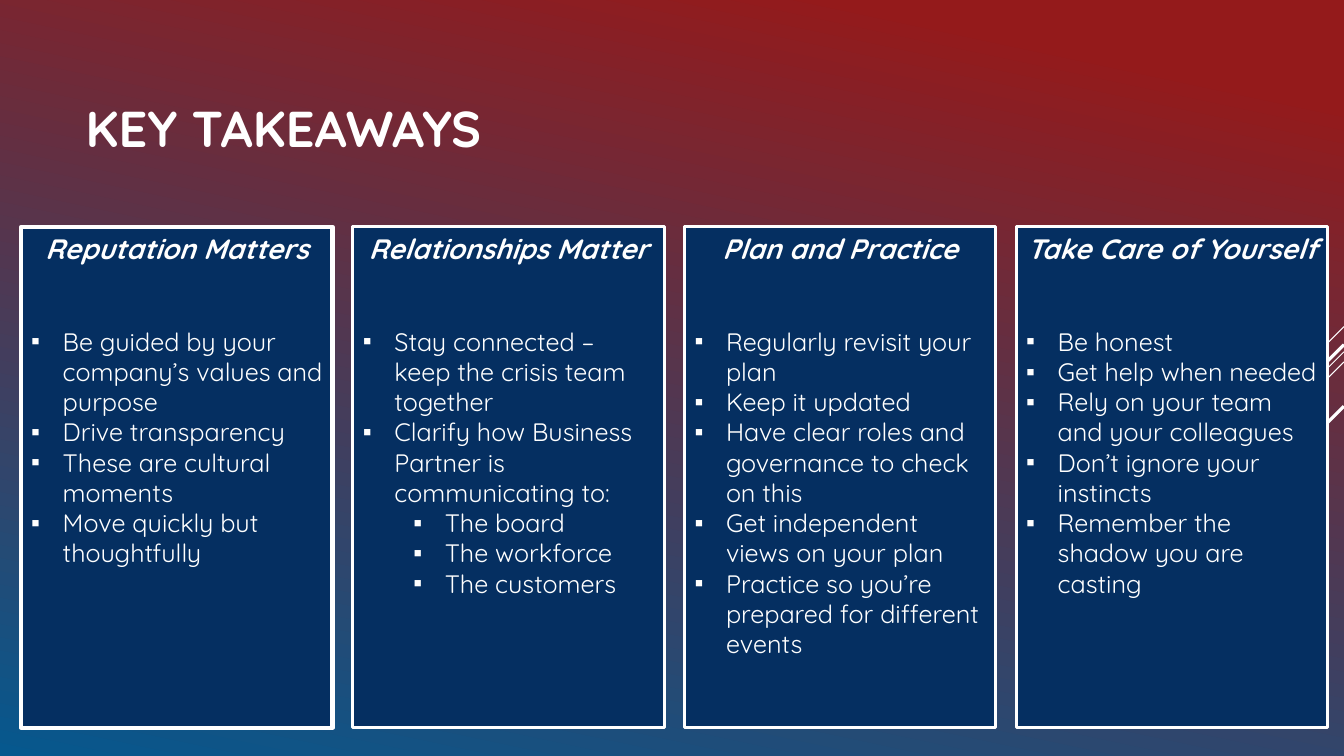
from dataclasses import dataclass

from lxml import etree
from pptx import Presentation
from pptx import util as u
from pptx.dml.color import RGBColor
from pptx.enum import shapes, text
from pptx.oxml import ns

FONT = "Quicksand"
COLORS = {"red": "941A1B", "blue": "06588E", "navy": "052F61", "white": "FFFFFF"}

CARD_LEFT, CARD_TOP = 15.1, 162
CARD_WIDTH, CARD_HEIGHT = 222.5, 357.8
CARD_PITCH = 236.9
INDENT, SUB_INDENT = 22.5, 58.5


@dataclass
class Ray:
    top: float
    reach: float
    weight: float


@dataclass
class Card:
    heading: str
    items: list[str]
    sub_items: list[str]
    border: float = 2.25


# Diagonal lines running down from the right edge
RAYS = [
    Ray(233.3, 72, 0.75),
    Ray(251.3, 234.7, 0.75),
    Ray(258.5, 149.4, 0.75),
    Ray(246.2, 137.5, 2.25),
    Ray(290.2, 100.1, 2.25),
]

CARDS = [
    Card("Reputation Matters", [
        "Be guided by your company’s values and purpose",
        "Drive transparency",
        "These are cultural moments",
        "Move quickly but thoughtfully",
    ], [], 3),
    Card("Relationships Matter", [
        "Stay connected – keep the crisis team together",
        "Clarify how Business Partner is communicating to:",
    ], ["The board", "The workforce", "The customers"]),
    Card("Plan and Practice", [
        "Regularly revisit your plan",
        "Keep it updated",
        "Have clear roles and governance to check on this",
        "Get independent views on your plan",
        "Practice so you’re prepared for different events",
    ], []),
    Card("Take Care of Yourself", [
        "Be honest",
        "Get help when needed",
        "Rely on your team and your colleagues",
        "Don’t ignore your instincts",
        "Remember the shadow you are casting",
    ], []),
]


def rgb(name: str) -> RGBColor:
    return RGBColor.from_string(COLORS[name])


def place(sp, left: float, top: float, width: float, height: float) -> None:
    sp.left, sp.top = u.Pt(left), u.Pt(top)
    sp.width, sp.height = u.Pt(width), u.Pt(height)


def add_run(p, content: str, size: float, bold: bool = False, italic: bool = False) -> None:
    r = p.add_run()
    r.text = content
    r.font.name, r.font.size = FONT, u.Pt(size)
    r.font.bold, r.font.italic = bold, italic
    r.font.color.rgb = rgb("white")


def set_bullet(p, char: str = "", left: float = 0) -> None:
    pPr = p._p.get_or_add_pPr()
    pPr.set("marL", str(u.Pt(left)))
    pPr.set("indent", str(-u.Pt(INDENT) if char else 0))
    if char:
        etree.SubElement(pPr, ns.qn("a:buFont")).set("typeface", "Arial")
        etree.SubElement(pPr, ns.qn("a:buChar")).set("char", char)
    else:
        etree.SubElement(pPr, ns.qn("a:buNone"))


def add_item(tf, content: str, level: int = 0) -> None:
    p = tf.add_paragraph()
    p.level = level
    set_bullet(p, "▪", SUB_INDENT if level else INDENT)
    p.alignment = text.PP_ALIGN.LEFT
    p.space_before = u.Pt(0)
    add_run(p, content, 18)


def fill_card(sp, card: Card, left: float) -> None:
    place(sp, left, CARD_TOP, CARD_WIDTH, CARD_HEIGHT)
    sp.fill.solid()
    sp.fill.fore_color.rgb = rgb("navy")
    sp.line.color.rgb = rgb("white")
    sp.line.width = u.Pt(card.border)

    tf = sp.text_frame
    tf.word_wrap = True
    tf.auto_size = text.MSO_AUTO_SIZE.NONE
    tf.vertical_anchor = text.MSO_ANCHOR.TOP
    p = tf.paragraphs[0]
    set_bullet(p)
    p.alignment = text.PP_ALIGN.CENTER
    p.space_before, p.space_after = u.Pt(0), u.Pt(43.2)
    add_run(p, card.heading, 20, bold=True, italic=True)
    for item in card.items:
        add_item(tf, item)
    for item in card.sub_items:
        add_item(tf, item, level=1)


def add_rays(s, right: float) -> None:
    grp = s.shapes.add_group_shape()
    for ray in RAYS:
        cx = grp.shapes.add_connector(
            shapes.MSO_CONNECTOR.STRAIGHT, u.Pt(right), u.Pt(ray.top),
            u.Pt(right - ray.reach), u.Pt(ray.top + ray.reach))
        cx.line.color.rgb = rgb("white")
        cx.line.width = u.Pt(ray.weight)
        etree.SubElement(cx._element.spPr, ns.qn("a:effectLst"))
    # Send the group behind the placeholders
    s.shapes.element.insert(2, grp.element)


def main() -> None:
    prs = Presentation()
    prs.slide_width, prs.slide_height = u.Pt(960), u.Pt(540)
    s = prs.slides.add_slide(prs.slide_layouts.get_by_name("Comparison"))

    # Background gradient
    fill = s.background.fill
    fill.gradient()
    fill.gradient_angle = 258
    for stop, (position, name) in zip(fill.gradient_stops, [(0.1, "red"), (1, "blue")]):
        stop.position = position
        stop.color.rgb = rgb(name)

    add_rays(s, 960)

    # Title
    title = s.shapes.title
    place(title, 54, 40.3, 851.8, 101.5)
    tf = title.text_frame
    tf.auto_size = text.MSO_AUTO_SIZE.NONE
    tf.vertical_anchor = text.MSO_ANCHOR.MIDDLE
    p = tf.paragraphs[0]
    p.alignment = text.PP_ALIGN.LEFT
    add_run(p, "KEY TAKEAWAYS", 36, bold=True)

    # Four cards in the layout's body placeholders
    for i, card in enumerate(CARDS):
        fill_card(s.placeholders[i + 1], card, CARD_LEFT + i * CARD_PITCH)

    prs.save("out.pptx")


if __name__ == "__main__":
    main()
